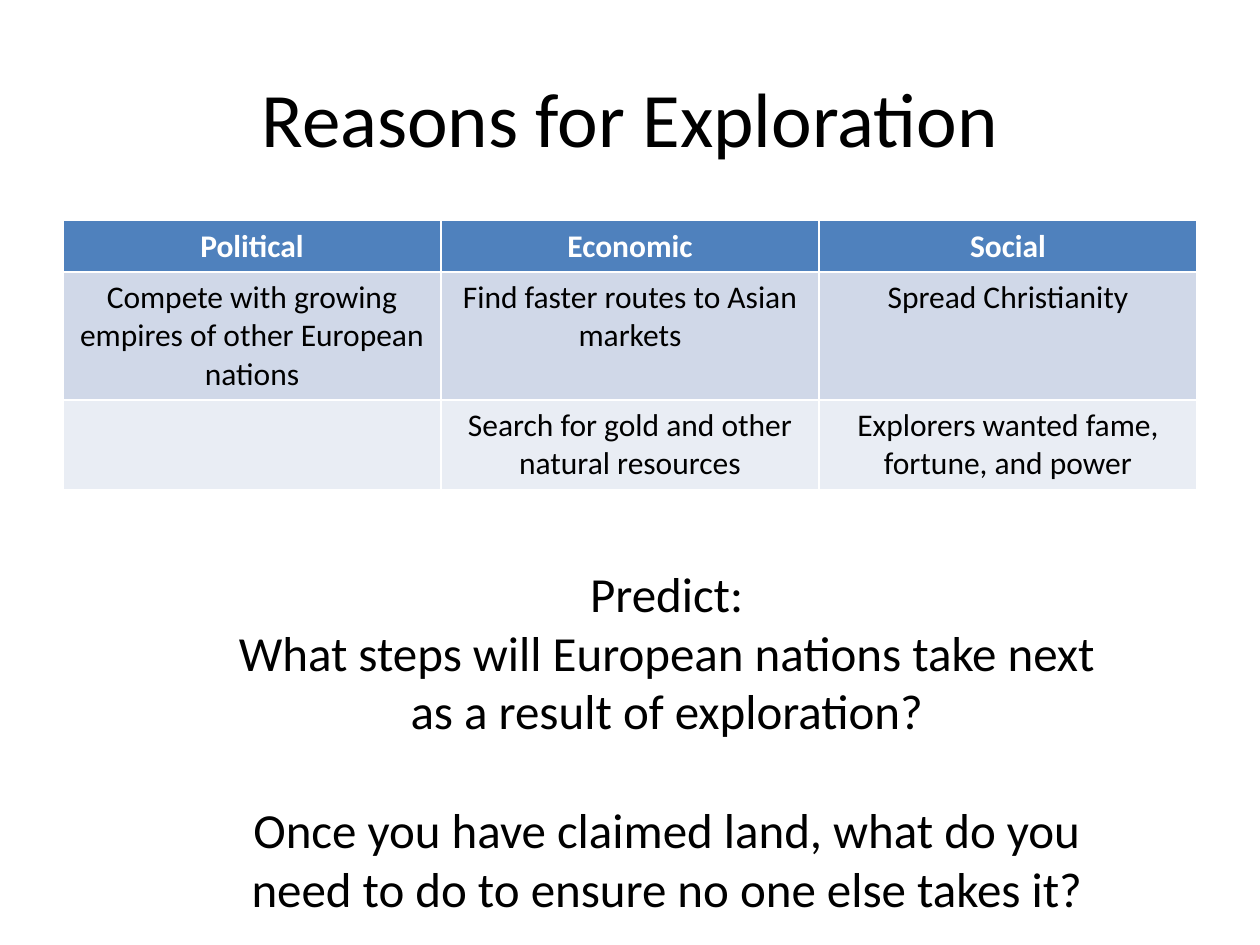
"""Build a slide on the reasons for exploration."""
from typing import NamedTuple

from pptx import Presentation
from pptx.dml.color import RGBColor
from pptx.enum.text import MSO_ANCHOR, MSO_AUTO_SIZE, PP_ALIGN
from pptx.util import Cm, Pt

CENTER = PP_ALIGN.CENTER
MIDDLE = MSO_ANCHOR.MIDDLE
GROW = MSO_AUTO_SIZE.SHAPE_TO_FIT_TEXT
FONT = "Calibri"
HUES = {
    "text": "000000",
    "light": "FFFFFF",
    "head": "4F81BD",
    "odd": "D0D8E8",
    "even": "E9EDF4",
}


class Row(NamedTuple):
    hue: str
    ink: str
    bold: bool
    cells: tuple[str, str, str]


class Box(NamedTuple):
    left: float
    top: float
    width: float
    height: float

    def sides(self) -> list[Cm]:
        return [Cm(side) for side in self]


ROWS = (
    Row("head", "light", True, ("Political", "Economic", "Social")),
    Row("odd", "text", False, (
        "Compete with growing empires of other European nations",
        "Find faster routes to Asian markets",
        "Spread Christianity",
    )),
    Row("even", "text", False, (
        "",
        "Search for gold and other natural resources",
        "Explorers wanted fame, fortune, and power",
    )),
)
TITLE = Box(1.27, 0.76, 22.86, 3.18)
GRID = Box(1.27, 4.45, 22.86, 3.09)
PROMPT = Box(4.45, 11.23, 17.98, 7.44)


def write(par, text: str, *, size: float, ink: str = "text",
          bold: bool = False, gap: float = 0) -> None:
    par.alignment = CENTER
    par.space_before = Pt(gap)
    run = par.add_run()
    run.text = text
    font = run.font
    font.name, font.size, font.bold = FONT, Pt(size), bold
    font.color.rgb = RGBColor.from_string(HUES[ink])


def draw_grid(slide, rows: tuple[Row, ...], box: Box) -> None:
    count = len(rows[0].cells)
    table = slide.shapes.add_table(len(rows), count, *box.sides()).table
    for line, row in zip(table.rows, rows):
        for cell, text in zip(line.cells, row.cells):
            cell.fill.solid()
            cell.fill.fore_color.rgb = RGBColor.from_string(HUES[row.hue])
            if text:
                write(cell.text_frame.paragraphs[0], text, size=18,
                      ink=row.ink, bold=row.bold)


def draw_title(slide, text: str, box: Box) -> None:
    title = slide.shapes.title
    title.left, title.top, title.width, title.height = box.sides()
    title.text_frame.vertical_anchor = MIDDLE
    write(title.text_frame.paragraphs[0], text, size=44)


def draw_prompt(slide, box: Box) -> None:
    frame = slide.shapes.add_textbox(*box.sides()).text_frame
    frame.word_wrap = True
    frame.auto_size = GROW
    write(frame.paragraphs[0], "Predict:", size=28)
    write(frame.add_paragraph(), "What steps will European nations take next "
          "as a result of exploration?", size=28)
    write(frame.add_paragraph(), "Once you have claimed land, what do you "
          "need to do to ensure no one else takes it?", size=28, gap=34)


def main() -> None:
    deck = Presentation()
    deck.slide_width, deck.slide_height = Cm(25.4), Cm(19.05)
    slide = deck.slides.add_slide(deck.slide_layouts[5])
    draw_title(slide, "Reasons for Exploration", TITLE)
    draw_grid(slide, ROWS, GRID)
    draw_prompt(slide, PROMPT)
    deck.save("out.pptx")


if __name__ == "__main__":
    main()
